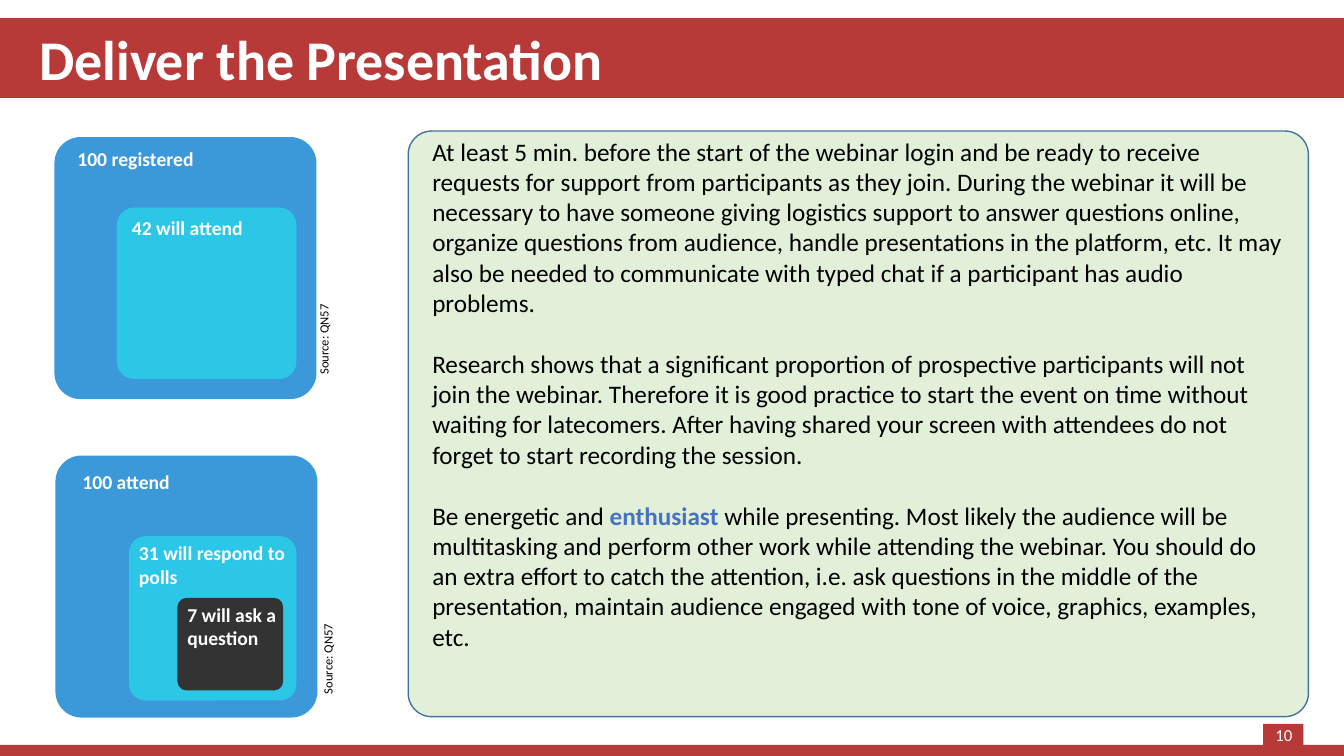
from pptx import Presentation
from pptx.dml.color import RGBColor
from pptx.enum.shapes import MSO_SHAPE
from pptx.enum.text import MSO_ANCHOR, PP_ALIGN
from pptx.util import Pt

COLOURS = {
    "white": "FFFFFF", "black": "000000", "red": "B83A38", "blue": "3C99D9",
    "cyan": "2CC7E6", "dark": "333333", "green": "E2F0D9",
    "outline": "43739E", "accent": "4472C4",
}

# Content: each paragraph is a list of (text, emphasised)
TITLE = "Deliver the Presentation"
PAGE_NUMBER = "10"
SOURCE = "Source: QN57"
ADVICE = [
    [("At least 5 min. before the start of the webinar login and be ready to receive "
      "requests for support from participants as they join. During the webinar it will be "
      "necessary to have someone giving logistics support to answer questions online, "
      "organize questions from audience, handle presentations in the platform, etc. It may "
      "also be needed to communicate with typed chat if a participant has audio problems.",
      False)],
    [("Research shows that a significant proportion of prospective participants will not "
      "join the webinar. Therefore it is good practice to start the event on time without "
      "waiting for latecomers. After having shared your screen with attendees do not "
      "forget to start recording the session.", False)],
    [("Be energetic and ", False), ("enthusiast ", True),
     ("while presenting. Most likely the audience will be multitasking and perform other "
      "work while attending the webinar. You should do an extra effort to catch the "
      "attention, i.e. ask questions in the middle of the presentation, maintain audience "
      "engaged with tone of voice, graphics, examples, etc.", False)],
]

# Nested squares: (left, top, width, height), fill, label, label (left, top, width, height)
SQUARES = [
    ((38.9, 97.9, 187.2, 187.2), "blue", "100 registered", (48.2, 101.5, 134.6, 24.5)),
    ((83.5, 148.3, 128.2, 122.4), "cyan", "42 will attend", (87.1, 150.5, 108, 24.5)),
    ((39.6, 325.4, 187.2, 187.2), "blue", "100 attend", (51.8, 331.9, 134.6, 24.5)),
    ((92.2, 383, 119.5, 117.4), "cyan", "31 will respond to polls", (92.2, 383, 119.5, 41)),
    ((126.7, 427, 75.6, 66.2), "dark", "7 will ask a question", (126.7, 427, 119.5, 41)),
]
SOURCE_SPOTS = [(180, 214.6), (182.9, 442.8)]

deck = Presentation()
deck.slide_width, deck.slide_height = Pt(960), Pt(540)
page = deck.slides.add_slide(deck.slide_layouts[6])


def colour(name):
    return RGBColor.from_string(COLOURS[name])


def add_block(kind, place, fill, radius=None, line=None):
    block = page.shapes.add_shape(kind, *map(Pt, place))
    block.shadow.inherit = False
    block.fill.solid()
    block.fill.fore_color.rgb = colour(fill)
    if radius is not None:
        block.adjustments[0] = radius
    if line:
        block.line.color.rgb = colour(line)
        block.line.width = Pt(1)
    else:
        block.line.fill.background()
    return block


def style(span, size, ink, bold=False):
    span.font.name = "Calibri"
    span.font.size = Pt(size)
    span.font.bold = bold
    span.font.color.rgb = colour(ink)


def add_label(place, text, size, ink, bold=False):
    box = page.shapes.add_textbox(*map(Pt, place))
    box.text_frame.word_wrap = True
    box.text_frame.text = text
    style(box.text_frame.paragraphs[0].runs[0], size, ink, bold)
    return box


page.background.fill.solid()
page.background.fill.fore_color.rgb = colour("white")

# Title band and footer
band = add_block(MSO_SHAPE.RECTANGLE, (0, 13, 960, 56.9), "red")
frame = band.text_frame
frame.margin_left, frame.margin_right, frame.margin_top, frame.margin_bottom = Pt(28), 0, 0, 0
frame.vertical_anchor = MSO_ANCHOR.MIDDLE
frame.text = TITLE
frame.paragraphs[0].alignment = PP_ALIGN.LEFT
style(frame.paragraphs[0].runs[0], 40, "white", True)
add_block(MSO_SHAPE.RECTANGLE, (0, 532, 960, 8), "red")

# Page number tab
add_block(MSO_SHAPE.RECTANGLE, (902.2, 517, 28.8, 16.5), "red")
number = add_label((899.3, 515.5, 31, 18), PAGE_NUMBER, 12, "white")
number.text_frame.vertical_anchor = MSO_ANCHOR.MIDDLE
number.text_frame.paragraphs[0].alignment = PP_ALIGN.RIGHT

# Nested squares with their labels
for place, fill, label, label_place in SQUARES:
    add_block(MSO_SHAPE.ROUNDED_RECTANGLE, place, fill, 0.1)
    add_label(label_place, label, 14, "white", True)

# Upright source notes
for left, top in SOURCE_SPOTS:
    add_label((left, top, 102.2, 18), SOURCE, 9, "black").rotation = 270

# Advice panel
add_block(MSO_SHAPE.ROUNDED_RECTANGLE, (291.6, 93.6, 643, 418.3), "green", 0.04, "outline")
advice = page.shapes.add_textbox(Pt(301.7), Pt(93.6), Pt(622), Pt(378)).text_frame
advice.word_wrap = True
for index, parts in enumerate(ADVICE):
    para = advice.add_paragraph() if index else advice.paragraphs[0]
    para.space_before = Pt(22 if index else 0)
    for text, emphasised in parts:
        span = para.add_run()
        span.text = text
        style(span, 18, "accent" if emphasised else "black", emphasised)

deck.save("out.pptx")
